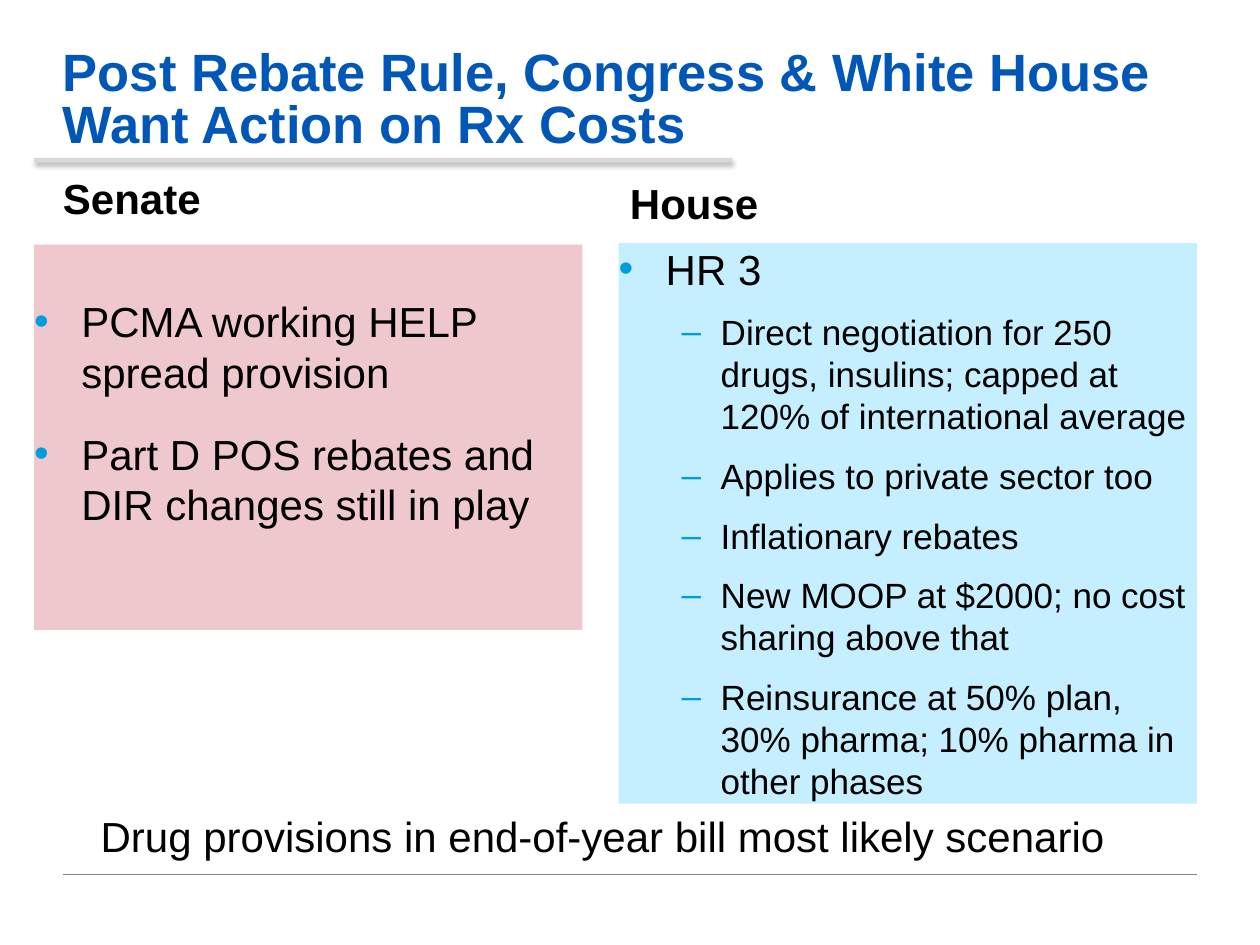
import pptx
import pptx.util
import pptx.dml.color
import pptx.enum.shapes
import pptx.enum.text
import pptx.oxml
import pptx.oxml.ns
from lxml import etree

Cm, Pt = pptx.util.Cm, pptx.util.Pt
qn = pptx.oxml.ns.qn
Anchor = pptx.enum.text.MSO_ANCHOR

BLUE, BLACK, CYAN = "0057B8", "000000", "009CDE"
PINK, SKY = "EFC8CE", "C5EEFF"
GREY, PALE = "7C878E", "D9D9D9"


def paint(hue):
    return pptx.dml.color.RGBColor.from_string(hue)


class Deck:
    font = "Arial"
    # level: (text size, left margin, hanging indent, sign)
    levels = {0: (24, 0.95, 0.95, "•"), 1: (20, 2.06, 0.79, "–")}

    def __init__(self, wide, high):
        self.show = pptx.Presentation()
        self.show.slide_width, self.show.slide_height = Cm(wide), Cm(high)
        self.slide = self.show.slides.add_slide(self.show.slide_layouts[6])

    def frame(self, shape, anchor, pad=(0, 0, 0, 0)):
        frame = shape.text_frame
        frame.word_wrap = True
        frame.vertical_anchor = anchor
        (frame.margin_left, frame.margin_top,
         frame.margin_right, frame.margin_bottom) = map(Cm, pad)
        return frame

    def run(self, para, text, size, hue=BLACK, bold=False):
        run = para.add_run()
        run.text = text
        run.font.name, run.font.size, run.font.bold = self.font, Pt(size), bold
        run.font.color.rgb = paint(hue)

    def label(self, place, text, size=24, hue=BLACK, bold=True,
              anchor=Anchor.BOTTOM, pad=(0, 0, 0, 0), pitch=None):
        box = self.slide.shapes.add_textbox(*map(Cm, place))
        para = self.frame(box, anchor, pad).paragraphs[0]
        if pitch:
            para.line_spacing = Pt(pitch)
        self.run(para, text, size, hue, bold)

    def bullet(self, para, left, hang, sign):
        props = para._p.get_or_add_pPr()
        props.set("marL", str(Cm(left)))
        props.set("indent", str(-Cm(hang)))
        tint = etree.SubElement(props, qn("a:buClr"))
        etree.SubElement(tint, qn("a:srgbClr"), val=CYAN)
        etree.SubElement(props, qn("a:buFont"), typeface=self.font)
        etree.SubElement(props, qn("a:buChar"), char=sign)

    def panel(self, place, fill, items, gaps, anchor, pad=(0, 0, 0, 0)):
        shape = self.slide.shapes.add_shape(
            pptx.enum.shapes.MSO_SHAPE.RECTANGLE, *map(Cm, place))
        shape.shadow.inherit = False
        shape.fill.solid()
        shape.fill.fore_color.rgb = paint(fill)
        shape.line.fill.background()
        frame = self.frame(shape, anchor, pad)
        for spot, (level, text) in enumerate(items):
            para = frame.add_paragraph() if spot else frame.paragraphs[0]
            size, left, hang, sign = self.levels[level]
            para.level = level
            para.alignment = pptx.enum.text.PP_ALIGN.LEFT
            para.space_before = Pt(gaps[level] if spot else 0)
            self.bullet(para, left, hang, sign)
            self.run(para, text, size)

    def rule(self, left, right, top, hue, width, shade=False):
        line = self.slide.shapes.add_connector(
            pptx.enum.shapes.MSO_CONNECTOR.STRAIGHT,
            Cm(left), Cm(top), Cm(right), Cm(top))
        line.line.color.rgb = paint(hue)
        line.line.width = Pt(width)
        effect = etree.SubElement(line._element.spPr, qn("a:effectLst"))
        if shade:
            cast = etree.SubElement(
                effect, qn("a:outerShdw"), blurRad=str(Pt(3.1)),
                dist=str(Pt(1.6)), dir="5400000", rotWithShape="0")
            tint = etree.SubElement(cast, qn("a:srgbClr"), val=BLACK)
            etree.SubElement(tint, qn("a:alpha"), val="38000")

    def save(self):
        self.show.save("out.pptx")


def main():
    deck = Deck(25.4, 19.05)

    # Footer rule and title
    deck.rule(1.27, 24.13, 17.63, GREY, 1)
    deck.label((1.27, 0.99, 22.86, 2.95),
               "Post Rebate Rule, Congress & White House Want Action on Rx Costs",
               30, BLUE, anchor=Anchor.TOP, pitch=30)

    # Senate column
    deck.label((1.27, 3.71, 10.69, 0.79), "Senate")
    deck.panel((0.69, 4.93, 11.05, 7.77), PINK, [
        (0, "PCMA working HELP spread provision"),
        (0, "Part D POS rebates and DIR changes still in play"),
    ], {0: 18}, Anchor.MIDDLE, (0, 0, 0, 1))

    # House column
    deck.label((12.7, 3.53, 11.23, 1.07), "House")
    deck.panel((12.47, 4.9, 11.66, 11.3), SKY, [
        (0, "HR 3"),
        (1, "Direct negotiation for 250 drugs, insulins; capped at "
            "120% of international average"),
        (1, "Applies to private sector too"),
        (1, "Inflationary rebates"),
        (1, "New MOOP at $2000; no cost sharing above that"),
        (1, "Reinsurance at 50% plan, 30% pharma; 10% pharma in other phases"),
    ], {0: 12, 1: 10}, Anchor.TOP)

    # Title rule and closing line
    deck.rule(0.69, 14.76, 3.23, PALE, 2, shade=True)
    deck.label((1.78, 16.21, 21.84, 1.27),
               "Drug provisions in end-of-year bill most likely scenario",
               bold=False, anchor=Anchor.TOP, pad=(0.25, 0.13, 0.25, 0.13))

    deck.save()


if __name__ == "__main__":
    main()
